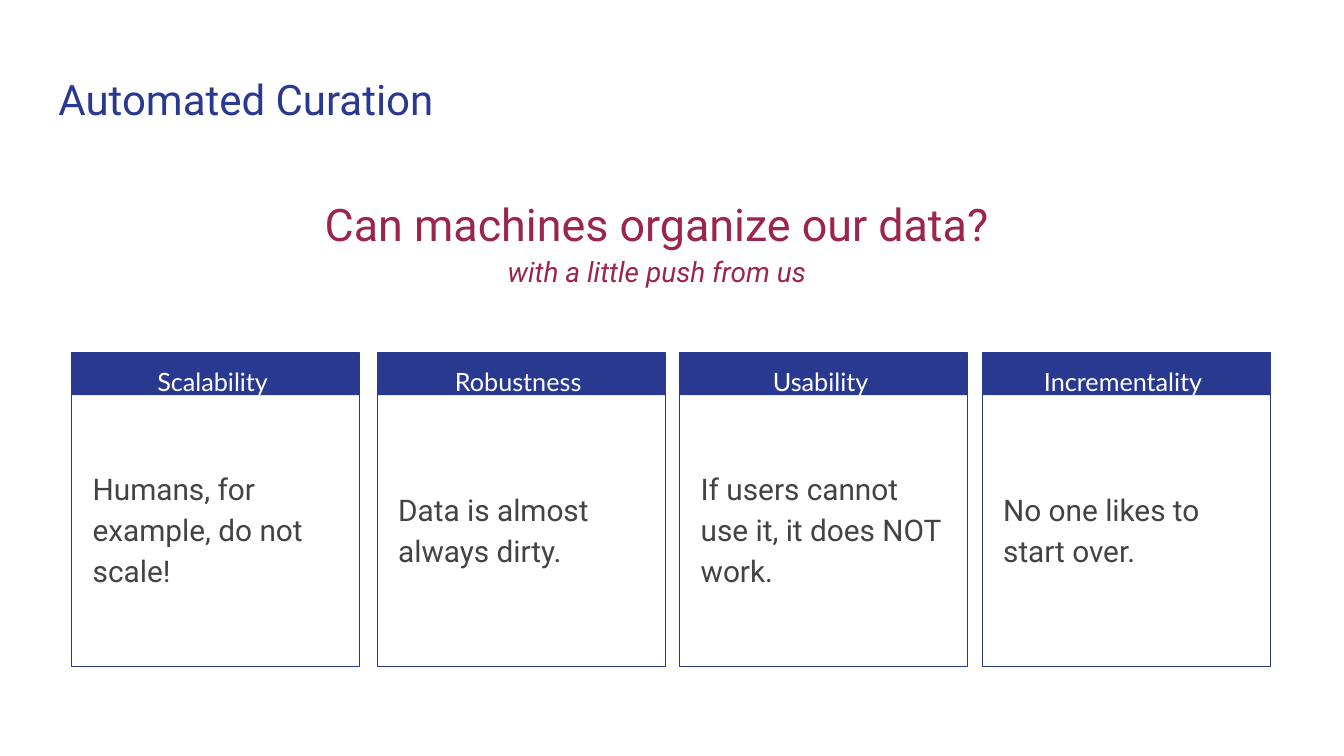
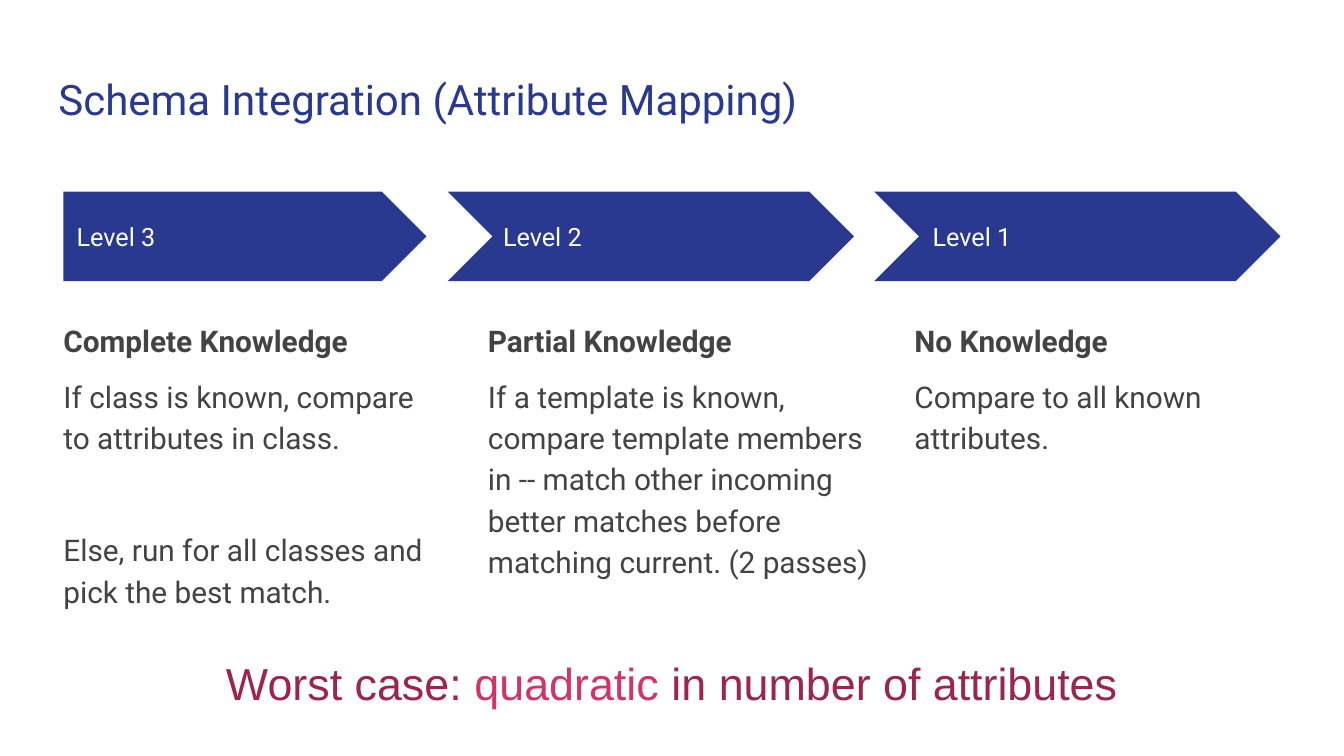
from pptx import Presentation
from pptx import util as u
from pptx.dml.color import RGBColor
from pptx.enum import shapes, text

NAVY, WINE, PINK, GREY, WHITE = "2A3990", "9C254D", "D23369", "434343", "FFFFFF"
TOP, MIDDLE = text.MSO_ANCHOR.TOP, text.MSO_ANCHOR.MIDDLE
LEFT, CENTER = text.PP_ALIGN.LEFT, text.PP_ALIGN.CENTER
TITLE_BOX = (0.45, 0.6, 12.42, 0.89)


def add_text(slide, box, paragraphs, size, color, font="Roboto", align=LEFT,
             anchor=TOP, spacing=1.0, after=0):
    frame = slide.shapes.add_textbox(*map(u.Inches, box)).text_frame
    frame.word_wrap = True
    frame.vertical_anchor = anchor
    frame.margin_left = frame.margin_right = u.Inches(0.13)
    frame.margin_top = frame.margin_bottom = u.Inches(0.13)
    for index, runs in enumerate(paragraphs):
        paragraph = frame.add_paragraph() if index else frame.paragraphs[0]
        paragraph.alignment = align
        paragraph.line_spacing = spacing
        paragraph.space_after = u.Pt(after)
        for words, run_color in runs:
            run = paragraph.add_run()
            run.text = words
            run.font.name = font
            run.font.size = u.Pt(size)
            run.font.color.rgb = RGBColor.from_string(run_color or color)
    return frame


def add_block(parent, kind, box, fill=None, line=None):
    block = parent.shapes.add_shape(kind, *map(u.Inches, box))
    block.shadow.inherit = False
    if fill:
        block.fill.solid()
        block.fill.fore_color.rgb = RGBColor.from_string(fill)
    else:
        block.fill.background()
    if line:
        block.line.color.rgb = RGBColor.from_string(line)
        block.line.width = u.Pt(0.75)
    else:
        block.line.fill.background()


deck = Presentation()
deck.slide_width, deck.slide_height = u.Inches(13.33), u.Inches(7.5)
slides = []
for title in ("Automated Curation", "Schema Integration (Attribute Mapping)"):
    slide = deck.slides.add_slide(deck.slide_layouts[6])
    add_text(slide, TITLE_BOX, [[(title, None)]], 30, NAVY)
    slides.append(slide)
curation, mapping = slides

add_text(curation, (2.54, 1.82, 7.95, 0.68),
         [[("Can machines organize our data?", None)]], 32, WINE, align=CENTER)
push = add_text(curation, (2.54, 2.39, 7.95, 0.45),
                [[("with a little push from us", None)]], 20, WINE, align=CENTER)
push.paragraphs[0].runs[0].font.italic = True

RECT = shapes.MSO_SHAPE.RECTANGLE
CARD_TOP, CARD_WIDTH, BAND_HEIGHT = 3.5, 2.86, 0.42
cards = [
    (0.71, "Scalability", "Humans, for example, do not scale!"),
    (3.74, "Robustness", "Data is almost always dirty."),
    (6.74, "Usability", "If users cannot use it, it does NOT work."),
    (9.74, "Incrementality", "No one likes to start over."),
]
for left, heading, remark in cards:
    card = curation.shapes.add_group_shape()
    add_block(card, RECT, (left, CARD_TOP, CARD_WIDTH, BAND_HEIGHT), fill=NAVY)
    add_block(card, RECT, (left, CARD_TOP, CARD_WIDTH, 3.11), line=NAVY)
    add_text(curation, (left - 0.03, CARD_TOP, CARD_WIDTH, 0.52), [[(heading, None)]],
             18, WHITE, font="Lato", align=CENTER, anchor=MIDDLE, spacing=1.15)
    add_text(curation, (left + 0.08, CARD_TOP + BAND_HEIGHT, 2.7, 2.62),
             [[(remark, None)]], 21.3, GREY, anchor=MIDDLE, spacing=1.15)

PENTAGON, CHEVRON = shapes.MSO_SHAPE.PENTAGON, shapes.MSO_SHAPE.CHEVRON
levels = [
    (PENTAGON, 0.63, 3.6, "Level 3", 0.63, 0.5, 3.94,
     ["Complete Knowledge", "If class is known, compare to attributes in class.",
      "Else, run for all classes and pick the best match."]),
    (CHEVRON, 4.44, 4.03, "Level 2", 4.86, 4.71, 4.22,
     ["Partial Knowledge",
      "If a template is known, compare template members in -- match other "
      "incoming better matches before matching current. (2 passes)"]),
    (CHEVRON, 8.67, 4.03, "Level 1", 9.12, 8.94, 3.76,
     ["No Knowledge", "Compare to all known attributes."]),
]
for kind, left, width, level, level_left, detail_left, detail_width, lines in levels:
    add_block(mapping, kind, (left, 1.9, width, 0.89), fill=NAVY)
    add_text(mapping, (level_left, 2.12, 3.29, 0.46), [[(level, None)]],
             18, WHITE, anchor=MIDDLE)
    detail = add_text(mapping, (detail_left, 3.02, detail_width, 3.87),
                      [[(line, None)] for line in lines],
                      21.3, GREY, spacing=1.15, after=10.7)
    detail.paragraphs[0].runs[0].font.bold = True
    for alternative in detail.paragraphs[2:]:
        alternative.space_before = u.Pt(40)

add_text(mapping, (0.63, 6.37, 12.07, 0.68),
         [[("Worst case: ", None), ("quadratic", PINK),
           (" in number of attributes", None)]],
         32, WINE, font="Arial", align=CENTER)

deck.save("out.pptx")
